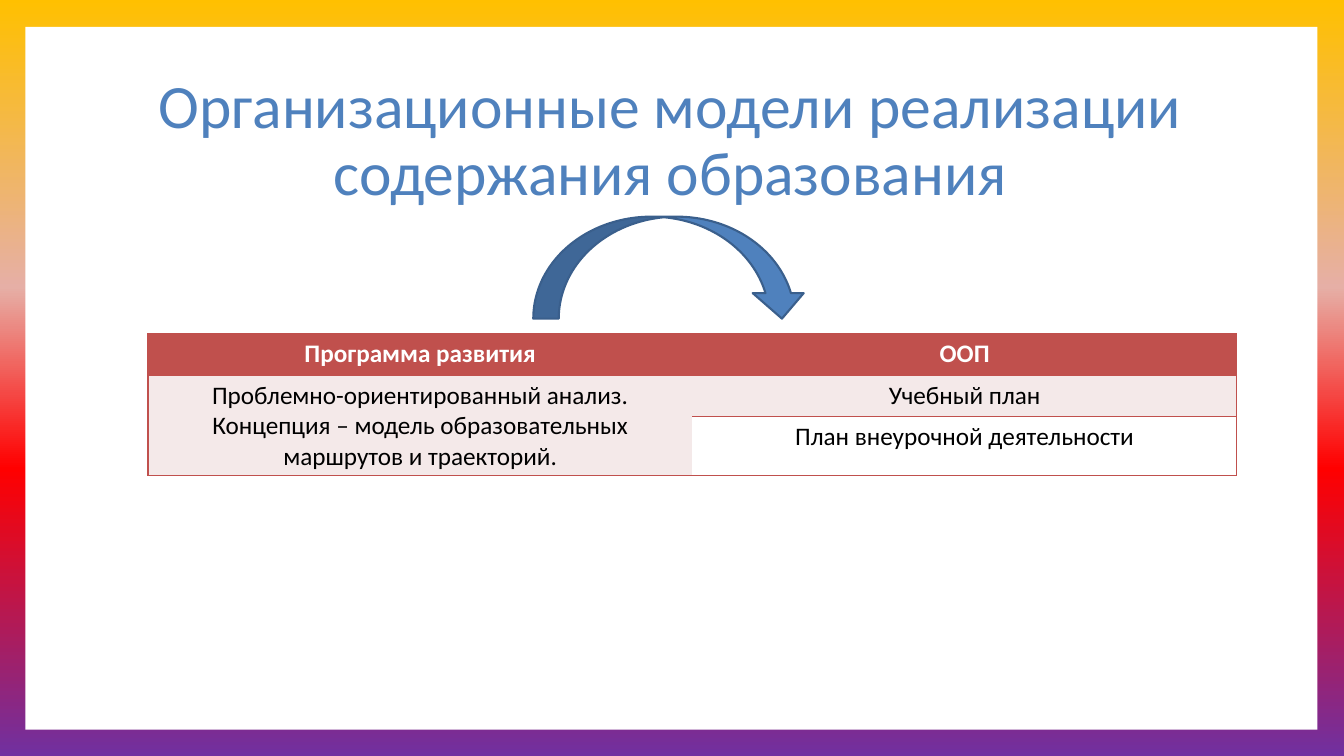
from lxml import etree
from pptx import Presentation
from pptx import util as u
from pptx.dml.color import RGBColor
from pptx.enum import shapes, text
from pptx.oxml import ns

TITLE = "Организационные модели реализации содержания образования"
ROWS = [
    (["Программа развития"], ["ООП"]),
    (["Проблемно-ориентированный анализ.",
      "Концепция – модель образовательных маршрутов и траекторий."],
     ["Учебный план"]),
    ([], ["План внеурочной деятельности"]),
]
ROW_HEIGHTS = [1.04, 1.04, 1.5]
COL_WIDTH = 13.72
COLORS = {"white": "FFFFFF", "black": "000000", "blue": "4F81BD",
          "outline": "3A5F8C", "red": "C0504D", "pale": "F4E9E9"}
BACKGROUND = [(0, "FFC000"), (38, "E6AFA6"), (62, "FF0000"), (100, "7030A0")]
ROW_FILLS = ["red", "pale", "white"]
NO_STYLE = "{2D5ABB26-0587-4C30-8999-92F81FD0307C}"


def rgb(name):
    return RGBColor.from_string(COLORS[name])


def write(tf, lines, size=18, color="black", bold=False, spacing=None):
    tf.word_wrap = True
    for i, line in enumerate(lines):
        p = tf.paragraphs[0] if i == 0 else tf.add_paragraph()
        p.alignment = text.PP_ALIGN.CENTER
        p.line_spacing = spacing
        r = p.add_run()
        r.text = line
        r.font.name = "Calibri"
        r.font.size = u.Pt(size)
        r.font.bold = bold
        r.font.color.rgb = rgb(color)


def add_color(parent, value):
    etree.SubElement(parent, ns.qn("a:srgbClr"), val=value)


def paint_background(s):
    fill = s.background.fill
    fill.gradient()
    fill.gradient_angle = 270
    stops = s.background._cSld.find(".//" + ns.qn("a:gsLst"))
    for stop in list(stops):
        stops.remove(stop)
    for position, color in BACKGROUND:
        stop = etree.SubElement(stops, ns.qn("a:gs"), pos=str(position * 1000))
        add_color(stop, color)


def add_borders(cell, sides):
    tcPr = cell._tc.get_or_add_tcPr()
    for i, side in enumerate("LRTB"):
        visible = side in sides
        ln = etree.Element(ns.qn("a:ln" + side), w=str(u.Pt(1)) if visible else "0")
        fill = etree.SubElement(ln, ns.qn("a:solidFill" if visible else "a:noFill"))
        if visible:
            add_color(fill, COLORS["red"])
        tcPr.insert(i, ln)


def add_shape(s, kind, box, fill, line=None):
    sp = s.shapes.add_shape(kind, *map(u.Cm, box))
    sp.shadow.inherit = False
    sp.fill.solid()
    sp.fill.fore_color.rgb = rgb(fill)
    if line:
        sp.line.color.rgb = rgb(line)
        sp.line.width = u.Pt(1.5)
    else:
        sp.line.fill.background()


def add_models_table(s):
    frame = s.shapes.add_table(len(ROWS), 2, u.Cm(3.73), u.Cm(8.41),
                               u.Cm(2 * COL_WIDTH), u.Cm(sum(ROW_HEIGHTS)))
    table = frame.table
    table._tbl.tblPr.find(ns.qn("a:tableStyleId")).text = NO_STYLE
    for col in table.columns:
        col.width = u.Cm(COL_WIDTH)
    for i, (row, height) in enumerate(zip(ROWS, ROW_HEIGHTS)):
        table.rows[i].height = u.Cm(height)
        for j, lines in enumerate(row):
            cell = table.cell(i, j)
            cell.fill.solid()
            cell.fill.fore_color.rgb = rgb("pale" if i and j == 0 else ROW_FILLS[i])
            write(cell.text_frame, lines, bold=i == 0,
                  color="black" if i else "white")
            add_borders(cell, "LR"[j] + ("TB" if j or i == 0 else "B"))
    table.cell(1, 0).merge(table.cell(2, 0))


def main():
    prs = Presentation()
    prs.slide_width, prs.slide_height = u.Cm(33.87), u.Cm(19.05)
    s = prs.slides.add_slide(prs.slide_layouts[6])
    paint_background(s)
    add_shape(s, shapes.MSO_SHAPE.RECTANGLE, (0.64, 0.68, 32.56, 17.71), "white")
    title = s.shapes.add_textbox(*map(u.Cm, (3.18, 1.7, 27.43, 3.76)))
    title.text_frame.vertical_anchor = text.MSO_ANCHOR.MIDDLE
    write(title.text_frame, [TITLE], size=44, color="blue", spacing=0.9)
    add_models_table(s)
    add_shape(s, shapes.MSO_SHAPE.CURVED_DOWN_ARROW, (13.44, 5.46, 6.91, 2.57),
              "blue", "outline")
    prs.save("out.pptx")


if __name__ == "__main__":
    main()
